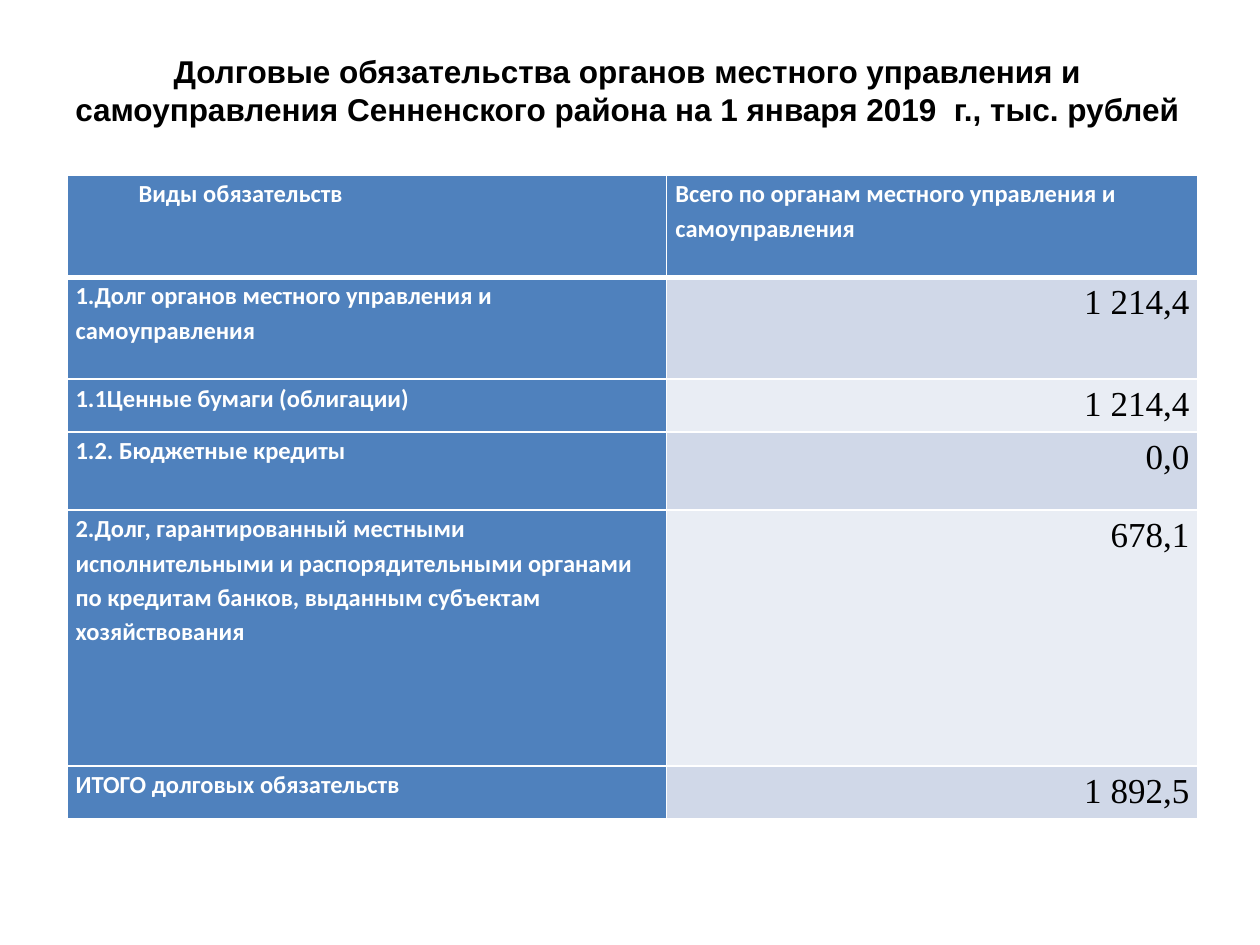
"""Build a slide with a table of local government debt."""
import pptx
import pptx.util
import pptx.dml.color
import pptx.enum.text
import pptx.oxml
import pptx.oxml.ns

Inches = pptx.util.Inches
Pt = pptx.util.Pt
ALIGN = pptx.enum.text.PP_ALIGN

COLORS = {
    "head": "4F81BD",
    "odd": "D0D8E8",
    "even": "E9EDF4",
    "white": "FFFFFF",
    "black": "000000",
}
TITLE = (
    "Долговые обязательства органов местного управления и "
    "самоуправления Сенненского района на 1 января 2019  г., тыс. рублей"
)
ROWS = [
    (0.81, "Виды обязательств", "Всего по органам местного управления и самоуправления"),
    (0.81, "1.Долг органов местного управления и самоуправления", "1 214,4"),
    (0.42, "1.1Ценные бумаги (облигации)", "1 214,4"),
    (0.62, "1.2. Бюджетные кредиты", "0,0"),
    (2.03, "2.Долг, гарантированный местными исполнительными и "
           "распорядительными органами по кредитам банков, выданным "
           "субъектам хозяйствования", "678,1"),
    (0.42, "ИТОГО долговых обязательств", "1 892,5"),
]
COLS = [4.76, 4.22]


def color(name):
    return pptx.dml.color.RGBColor.from_string(COLORS[name])


def style(para, face, size, bold, ink):
    para.font.name = face
    para.font.size = Pt(size)
    para.font.bold = bold
    para.font.color.rgb = color(ink)


def add_title(slide):
    title = slide.shapes.title
    title.left, title.top = Inches(0.45), Inches(0.36)
    title.width, title.height = Inches(9.06), Inches(0.71)
    frame = title.text_frame
    frame.text = TITLE
    frame.word_wrap = True
    frame.vertical_anchor = pptx.enum.text.MSO_ANCHOR.MIDDLE
    para = frame.paragraphs[0]
    para.alignment = ALIGN.CENTER
    style(para, "Arial", 18, True, "black")


def add_border(cell, side, width):
    line = pptx.oxml.parse_xml(
        f'<a:ln{side} {pptx.oxml.ns.nsdecls("a")} w="{Pt(width)}">'
        f'<a:solidFill><a:srgbClr val="{COLORS["white"]}"/></a:solidFill>'
        f'</a:ln{side}>'
    )
    cell._tc.get_or_add_tcPr().append(line)


def fill_cell(cell, text, row, col):
    thick = {0: "B", 1: "T"}.get(row)
    for side in "LRTB":
        add_border(cell, side, 3 if side == thick else 1)
    cell.margin_left = cell.margin_right = Inches(0.07)
    cell.margin_top = cell.margin_bottom = 0
    cell.text = text
    para = cell.text_frame.paragraphs[0]
    para.line_spacing = 1.15
    cell.fill.solid()
    if row == 0 or col == 0:
        cell.fill.fore_color.rgb = color("head")
        style(para, "Calibri", 14, True, "white")
    else:
        cell.fill.fore_color.rgb = color("odd" if row % 2 else "even")
        para.alignment = ALIGN.RIGHT
        style(para, "Times New Roman", 20, False, "black")


def add_debts(slide):
    high = sum(row[0] for row in ROWS)
    table = slide.shapes.add_table(
        len(ROWS), len(COLS), Inches(0.53), Inches(1.39),
        Inches(sum(COLS)), Inches(high),
    ).table
    for col, width in enumerate(COLS):
        table.columns[col].width = Inches(width)
    for row, (height, *texts) in enumerate(ROWS):
        table.rows[row].height = Inches(height)
        for col, text in enumerate(texts):
            fill_cell(table.cell(row, col), text, row, col)
    first = table.cell(0, 0).text_frame.paragraphs[0]
    first._p.get_or_add_pPr().set("marL", str(Inches(0.5)))


def main():
    deck = pptx.Presentation()
    deck.slide_width, deck.slide_height = Inches(10), Inches(7.5)
    slide = deck.slides.add_slide(deck.slide_layouts[5])
    add_debts(slide)
    add_title(slide)
    deck.save("out.pptx")


if __name__ == "__main__":
    main()
